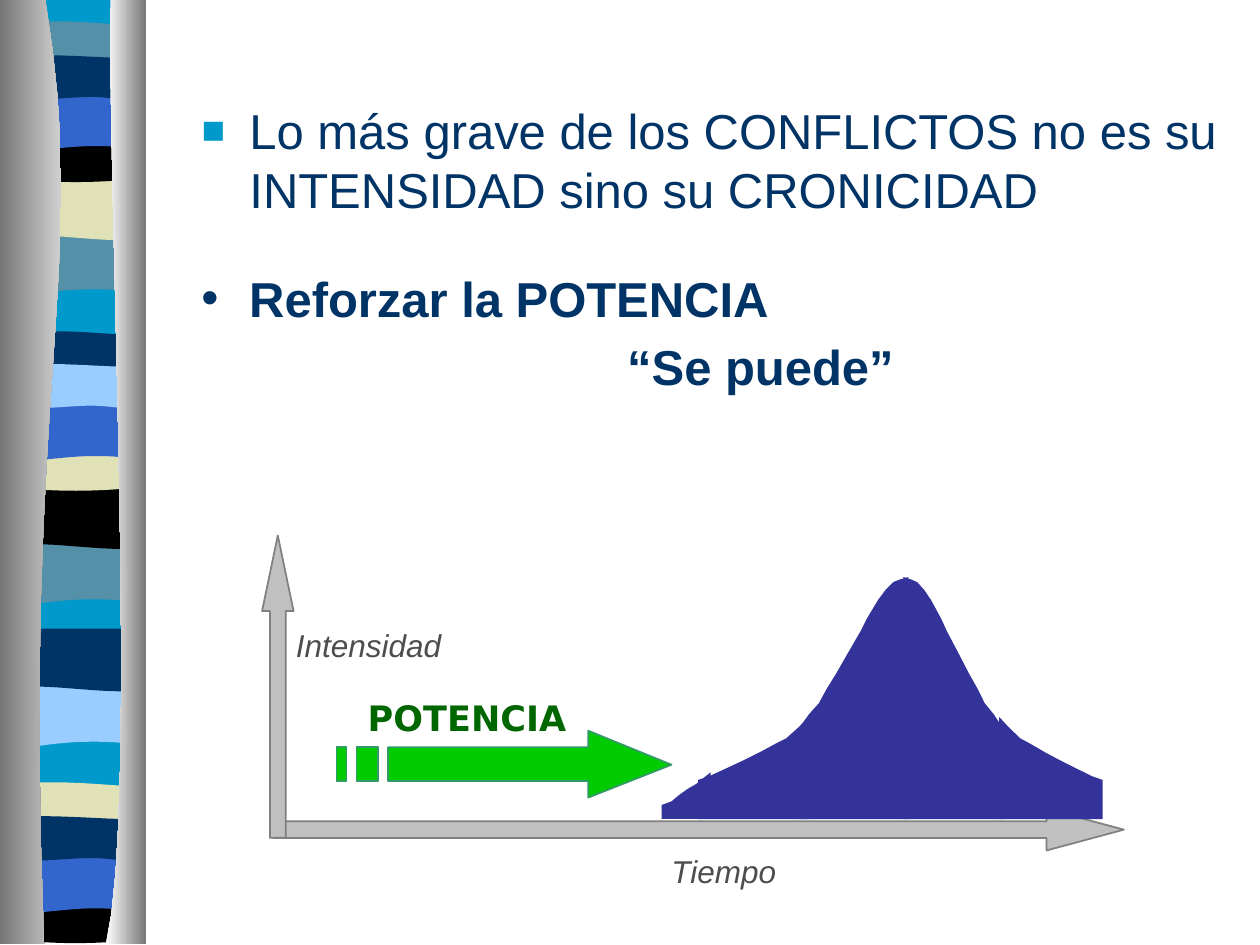
from lxml.etree import SubElement
from pptx import Presentation
from pptx.dml.color import RGBColor
from pptx.enum.shapes import MSO_SHAPE
from pptx.enum.text import MSO_AUTO_SIZE, MSO_ANCHOR
from pptx.oxml.ns import qn
from pptx.util import Inches, Pt

NAVY, CYAN, TEAL, BLUE = "003366", "0099CC", "5490A8", "3366CC"
SAND, SKY, BLACK, INDIGO = "E1E1B7", "99CCFF", "000000", "333399"

# Each outline step is a point (x, y) or a Bezier curve (x1, y1, x2, y2, x, y).
WAVES = {
    "dip": [(1.14, 0), (1.14, 0.47), (0.39, 0.39, 0.24, 0.55, 0.05, 0.47), (0.05, 0)],
    "swell": [(1.14, 0), (1.14, 0.47), (0.96, 0.55, 0.39, 0.42, 0.06, 0.47), (0.06, 0)],
    "crest": [(1.14, 0), (1.14, 0.24), (0.96, 0.29, 0.24, 0.29, 0.05, 0.24), (0.05, 0),
              (0.12, -0.05, 0.29, -0.04, 0.47, -0.04), (0.65, -0.04, 1, -0.01, 1.14, 0)],
    "bowl": [(1.14, 0), (1.14, 0.32), (0.96, 0.38, 0.24, 0.38, 0.06, 0.32), (0.06, 0),
             (0.72, 0.05, 0.91, 0, 1.14, 0)],
    "arch": [(1.14, 0), (1.14, 0.47), (0.97, 0.42, 0.9, 0.42, 0.72, 0.42),
             (0.54, 0.42, 0.22, 0.47, 0.06, 0.47), (0.06, 0)],
    "ribbon": [(1.14, 0), (1.14, 0.31), (1.07, 0.36, 0.9, 0.31, 0.72, 0.31),
               (0.54, 0.31, 0.17, 0.36, 0.05, 0.31), (0.05, 0),
               (0.21, -0.05, 0.79, 0, 0.97, 0), (1.15, 0, 1.1, 0, 1.14, 0)],
}
BANDS = [
    ("dip", 1.85, TEAL), ("swell", 1.41, SAND), ("crest", 0.21, TEAL),
    ("bowl", 1.08, BLACK), ("arch", 0.74, BLUE), ("ribbon", 0.46, NAVY),
    ("dip", 4.31, TEAL), ("swell", 3.86, BLACK), ("crest", 2.67, NAVY),
    ("bowl", 3.53, SAND), ("arch", 3.2, BLUE), ("ribbon", 2.91, SKY),
    ("dip", 5.44, SKY), ("swell", 4.99, NAVY), ("crest", 6.25, SAND),
    ("bowl", 7.12, BLACK), ("arch", 6.79, BLUE), ("ribbon", 6.5, NAVY),
]
STRIP = [(0.05, 0), (1.14, 0), (1.14, 7.47), (0.05, 7.47)]
CURTAINS = [
    ([(0.36, 0), (0.72, 2.16, 0.17, 2.96, 0.35, 7.49), (0, 7.49), (0, 0)], "767676", "D0D0D0"),
    ([(0.88, 0), (0.84, 1.25, 1.11, 6.46, 0.84, 7.49), (1.16, 7.49), (1.16, 0)], "FFFFFF", "767676"),
]

FOOT = [(5.54, 6.19), (5.54, 6.5), (6.42, 6.5), (6.42, 5.69), (6.34, 5.77), (6.24, 5.86),
        (6.16, 5.9), (6.03, 5.97), (5.91, 6.03), (5.76, 6.1), (5.63, 6.16)]
SLOPE = [(7.21, 4.58), (7.21, 6.5), (6.34, 6.5), (6.34, 5.78), (6.42, 5.67), (6.5, 5.58),
         (6.56, 5.47), (6.64, 5.34), (6.72, 5.2), (6.83, 5.01), (6.88, 4.91), (6.97, 4.76),
         (7.03, 4.68), (7.09, 4.62), (7.14, 4.6)]
TOE = [(5.25, 6.39), (5.25, 6.5), (5.64, 6.5), (5.64, 6.13), (5.59, 6.17), (5.53, 6.22),
       (5.46, 6.26), (5.39, 6.31), (5.33, 6.36)]
POWER_ARROW = [
    [(4.67, 5.8), (4.67, 5.93), (3.08, 5.93), (3.08, 6.2), (4.67, 6.2), (4.67, 6.33), (5.33, 6.07)],
    [(2.83, 5.93), (2.83, 6.2), (3, 6.2), (3, 5.93)],
    [(2.67, 5.93), (2.67, 6.2), (2.75, 6.2), (2.75, 5.93)],
]
AXES = [
    (MSO_SHAPE.RIGHT_ARROW, (2.17, 6.42, 6.75, 0.33), (0.4, 1.86)),
    (MSO_SHAPE.UP_ARROW, (2.08, 4.25, 0.25, 2.4), (0.5, 2.4)),
]
LABELS = [
    ("Tiempo", (5.23, 6.71, 1.03, 0.4), 18, "Arial", "4D4D4D", False, True),
    ("Intensidad", (2.25, 4.92, 1.58, 0.4), 18, "Arial", "4D4D4D", False, True),
    ("POTENCIA", (2.82, 5.48, 1.82, 0.43), 20, "DejaVu Sans", "006600", True, False),
]
CONFLICT = "Lo más grave de los CONFLICTOS no es su INTENSIDAD sino su CRONICIDAD"
REINFORCE = "Reforzar la POTENCIA"
MOTTO = "“Se puede”"


def rgb(color):
    return RGBColor.from_string(color)


def flatten(outline, steps=16):
    points = []
    for step in outline:
        if len(step) == 2:
            points.append(step)
            continue
        controls = [points[-1], step[:2], step[2:4], step[4:]]
        for i in range(1, steps + 1):
            t = i / steps
            weights = ((1 - t) ** 3, 3 * t * (1 - t) ** 2, 3 * t * t * (1 - t), t ** 3)
            points.append(tuple(sum(w * c[axis] for w, c in zip(weights, controls))
                                for axis in (0, 1)))
    return points


def mirrored(outline, left, width):
    xs = [x for x, _ in outline]
    scale = width / (max(xs) - min(xs))
    return [(left + (max(xs) - x) * scale, y) for x, y in outline]


def paint(shape, fill, line=None):
    shape.shadow.inherit = False
    shape.fill.solid()
    shape.fill.fore_color.rgb = rgb(fill)
    if line:
        shape.line.color.rgb = rgb(line)
        shape.line.width = Pt(1)
    else:
        shape.line.fill.background()


def draw(shapes, contours, fill, line=None):
    contours = [[(Inches(x), Inches(y)) for x, y in flatten(c)] for c in contours]
    builder = shapes.build_freeform(*contours[0][0])
    builder.add_line_segments(contours[0][1:])
    for contour in contours[1:]:
        builder.move_to(*contour[0])
        builder.add_line_segments(contour[1:])
    shape = builder.convert_to_shape()
    paint(shape, fill, line)
    return shape


def style(paragraph, size, font, color, bold=False, italic=False):
    for run in paragraph.runs:
        run.font.size, run.font.name = Pt(size), font
        run.font.bold, run.font.italic = bold, italic
        run.font.color.rgb = rgb(color)


def set_bullet(paragraph, char=None, color=NAVY, percent=100, margin=0.38, hang=0.38):
    paragraph.space_before = Pt(5.6)
    props = paragraph._p.get_or_add_pPr()
    props.set("marL", str(Inches(margin)))
    props.set("indent", str(-Inches(hang)))
    if not char:
        SubElement(props, qn("a:buNone"))
        return
    SubElement(SubElement(props, qn("a:buClr")), qn("a:srgbClr")).set("val", color)
    SubElement(props, qn("a:buSzPct")).set("val", str(percent * 1000))
    SubElement(props, qn("a:buFont")).set("typeface", "Arial")
    SubElement(props, qn("a:buChar")).set("char", char)


def add_text(shapes, box, text, wrap=True):
    frame = shapes.add_textbox(*map(Inches, box)).text_frame
    frame.word_wrap = wrap
    frame.text = text
    return frame


def add_curtain_strip(shapes):
    draw(shapes, [STRIP], CYAN)
    for wave, top, color in BANDS:
        outline = [tuple(v + top if i % 2 else v for i, v in enumerate(step))
                   for step in WAVES[wave]]
        draw(shapes, [outline], color)
    for outline, start, end in CURTAINS:
        curtain = draw(shapes, [outline], start)
        curtain.fill.gradient()
        curtain.fill.gradient_angle = 0
        for stop, color in zip(curtain.fill.gradient_stops, (start, end)):
            stop.color.rgb = rgb(color)


def add_graph(shapes):
    for kind, box, adjustments in AXES:
        axis = shapes.add_shape(kind, *map(Inches, box))
        axis.adjustments[0], axis.adjustments[1] = adjustments
        paint(axis, "C0C0C0", "808080")
    draw(shapes, POWER_ARROW, "00CC00", "339966")
    for text, box, *look in LABELS:
        style(add_text(shapes, box, text, wrap=False).paragraphs[0], *look)
    for flank in (FOOT, SLOPE, TOE, mirrored(FOOT, 7.93, 0.82), mirrored(SLOPE, 7.17, 0.79)):
        draw(shapes, [flank], INDIGO)


def main():
    deck = Presentation()
    deck.slide_width, deck.slide_height = Inches(10), Inches(7.5)
    slide = deck.slides.add_slide(deck.slide_layouts[1])
    title = slide.shapes.title
    title._element.getparent().remove(title._element)

    body = slide.placeholders[1]
    body.left, body.top, body.width, body.height = map(Inches, (1.5, 0.75, 8.5, 1.17))
    body.text_frame.text = CONFLICT
    body.text_frame.auto_size = MSO_AUTO_SIZE.NONE
    body.text_frame.vertical_anchor = MSO_ANCHOR.TOP
    set_bullet(body.text_frame.paragraphs[0], "■", CYAN, 80)
    style(body.text_frame.paragraphs[0], 28, "Arial", NAVY)

    add_curtain_strip(slide.shapes)
    add_graph(slide.shapes)

    reinforce, motto = add_text(slide.shapes, (1.5, 2.08, 8.5, 1.17),
                                f"{REINFORCE}\n{MOTTO}").paragraphs
    set_bullet(reinforce, "•")
    set_bullet(motto, margin=3.38, hang=0)
    for paragraph in (reinforce, motto):
        style(paragraph, 28, "Arial", NAVY, bold=True)
    deck.save("out.pptx")


if __name__ == "__main__":
    main()
